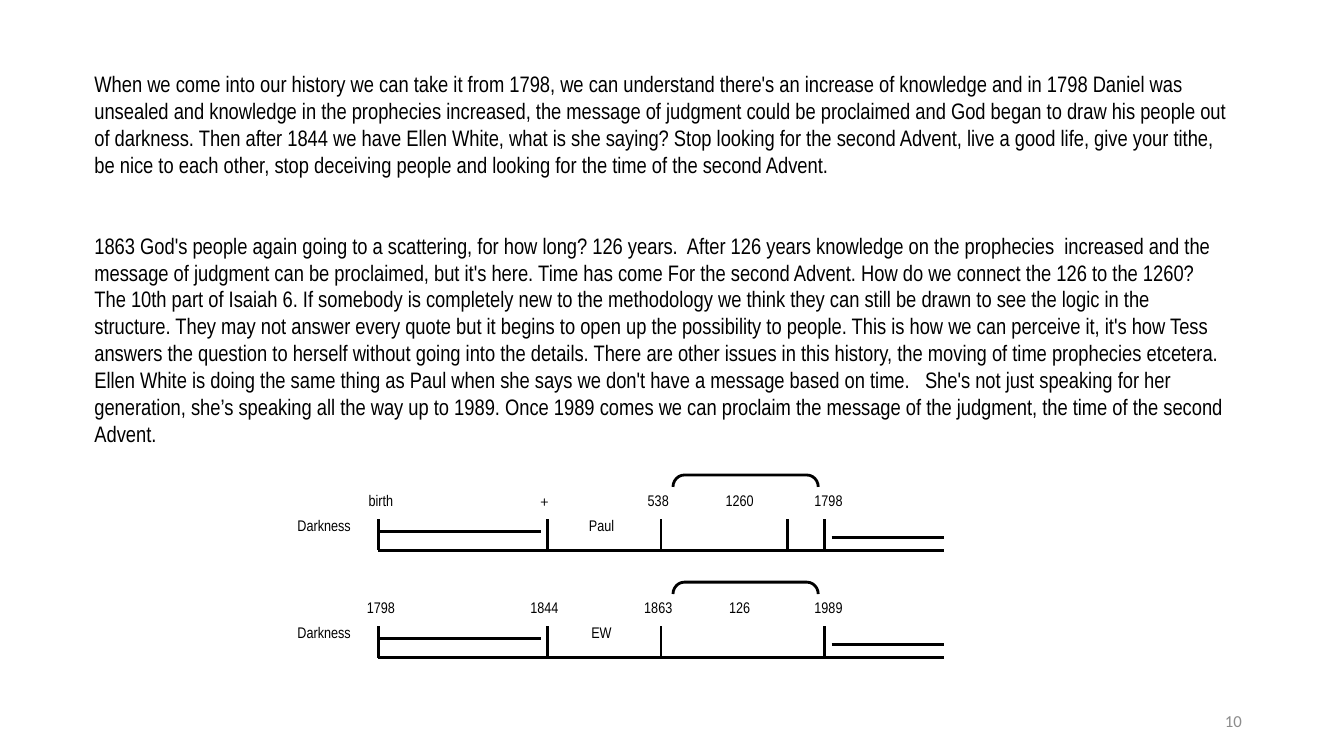
from lxml.etree import SubElement
from pptx import Presentation
from pptx.dml.color import RGBColor as RGB
from pptx.enum.shapes import MSO_CONNECTOR as Link, MSO_SHAPE as Shape
from pptx.enum.text import MSO_ANCHOR as Anchor, PP_ALIGN as Align
from pptx.oxml.ns import qn
from pptx.util import Cm, Pt

FIRST = (
    "When we come into our history we can take it from 1798, we can understand there's an increase of "
    "knowledge and in 1798 Daniel was unsealed and knowledge in the prophecies increased, the message of "
    "judgment could be proclaimed and God began to draw his people out of darkness. Then after 1844 we have "
    "Ellen White, what is she saying? Stop looking for the second Advent, live a good life, give your tithe, "
    "be nice to each other, stop deceiving people and looking for the time of the second Advent."
)
SECOND = (
    "1863 God's people again going to a scattering, for how long? 126 years.  After 126 years knowledge on "
    "the prophecies  increased and the message of judgment can be proclaimed, but it's here. Time has come "
    "For the second Advent. How do we connect the 126 to the 1260? The 10th part of Isaiah 6.",
    "If somebody is completely new to the methodology we think they can still be drawn to see the logic in "
    "the structure. They may not answer every quote but it begins to open up the possibility to people. This "
    "is how we can perceive it, it's how Tess answers the question to herself without going into the details. "
    "There are other issues in this history, the moving of time prophecies etcetera.",
    "Ellen White is doing the same thing as Paul when she says we don't have a message based on time.   She's "
    "not just speaking for her generation, she’s speaking all the way up to 1989. Once 1989 comes we can "
    "proclaim the message of the judgment, the time of the second Advent.",
)
START, CROSS, SCATTER, CLOSE, END = 9.53, 13.79, 16.66, 20.78, 23.8
TICKS = (START, CROSS, SCATTER, CLOSE)
LEFTS = (9.04, 13.16, 16.03, 18.08, 20.32)
ROWS = (
    (13.87, ("birth", "+", "538", "1260", "1798"), "Paul", (19.84,)),
    (16.57, ("1798", "1844", "1863", "126", "1989"), "EW", ()),
)


def hue(code):
    """Turn a hex string into a colour."""
    return RGB.from_string(code)


def write(para, text, font="Arial Narrow", size=11, color="000000", align=Align.LEFT, gap=0):
    """Put one formatted run into a paragraph."""
    run = para.add_run()
    run.text = text
    run.font.name = font
    run.font.size = Pt(size)
    run.font.color.rgb = hue(color)
    para.alignment = align
    para.space_before = Pt(gap)


class Page:
    """Hold the line style and the current slide."""

    ink = "000000"
    width = 2

    def __init__(self, deck):
        """Add a blank slide."""
        self.slide = deck.slides.add_slide(deck.slide_layouts[6])
        self.shapes = self.slide.shapes

    def group(self):
        """Send the next elements to a new group."""
        self.shapes = self.slide.shapes.add_group_shape().shapes

    def stroke(self, line):
        """Apply the line style."""
        line.color.rgb = hue(self.ink)
        line.width = Pt(self.width)

    def frame(self, x, y, w, h):
        """Add a wrapping text box and return its frame."""
        frame = self.shapes.add_textbox(Cm(x), Cm(y), Cm(w), Cm(h)).text_frame
        frame.word_wrap = True
        return frame

    def label(self, text, x, y, w=1.12, **style):
        """Add a small centred label."""
        frame = self.frame(x, y, w, 0.74)
        frame.margin_left = frame.margin_right = Cm(0.1)
        frame.margin_top = frame.margin_bottom = Cm(0.1)
        write(frame.paragraphs[0], text, align=Align.CENTER, **style)

    def line(self, x1, y1, x2, y2):
        """Add a straight line."""
        link = self.shapes.add_connector(Link.STRAIGHT, Cm(x1), Cm(y1), Cm(x2), Cm(y2))
        self.stroke(link.line)
        SubElement(link._element.spPr, qn("a:effectLst"))

    def brace(self, x, y, w, h):
        """Add a bracket turned to open downwards."""
        arc = self.shapes.add_shape(Shape.LEFT_BRACKET, Cm(x), Cm(y), Cm(w), Cm(h))
        arc.rotation = 90
        arc.adjustments[0] = 0.958
        arc.shadow.inherit = False
        arc.fill.background()
        self.stroke(arc.line)

    def chart(self, base, dates, name, extra):
        """Draw one timeline standing on its base line."""
        self.group()
        self.line(START, base, END, base)
        for x in TICKS + extra:
            self.line(x, base - 0.79, x, base)
        self.line(START, base - 0.48, 13.64, base - 0.48)
        self.line(20.96, base - 0.32, END, base - 0.32)
        self.brace(18.64, base - 3.58, 0.3, 3.66)
        self.label("Darkness", 7.14, base - 0.96, w=2.06)
        self.label(name, 14.6, base - 0.96)
        for x, date in zip(LEFTS, dates):
            self.label(date, x, base - 1.6, font="Quicksand" if date == "+" else "Arial Narrow")


def main():
    """Build the slide and save it."""
    deck = Presentation()
    deck.slide_width, deck.slide_height = Cm(33.87), Cm(19.05)
    page = Page(deck)
    foot = page.frame(23.93, 17.65, 7.62, 1.02)
    foot.vertical_anchor = Anchor.MIDDLE
    write(foot.paragraphs[0], "10", font="Calibri", size=12, color="8C8C8C", align=Align.RIGHT)
    body = page.frame(2.13, 1.65, 29.08, 9.91)
    write(body.paragraphs[0], FIRST, size=16)
    write(body.add_paragraph(), " ".join(SECOND), size=16, gap=38.5)
    for row in ROWS:
        page.chart(*row)
    deck.save("out.pptx")


if __name__ == "__main__":
    main()
